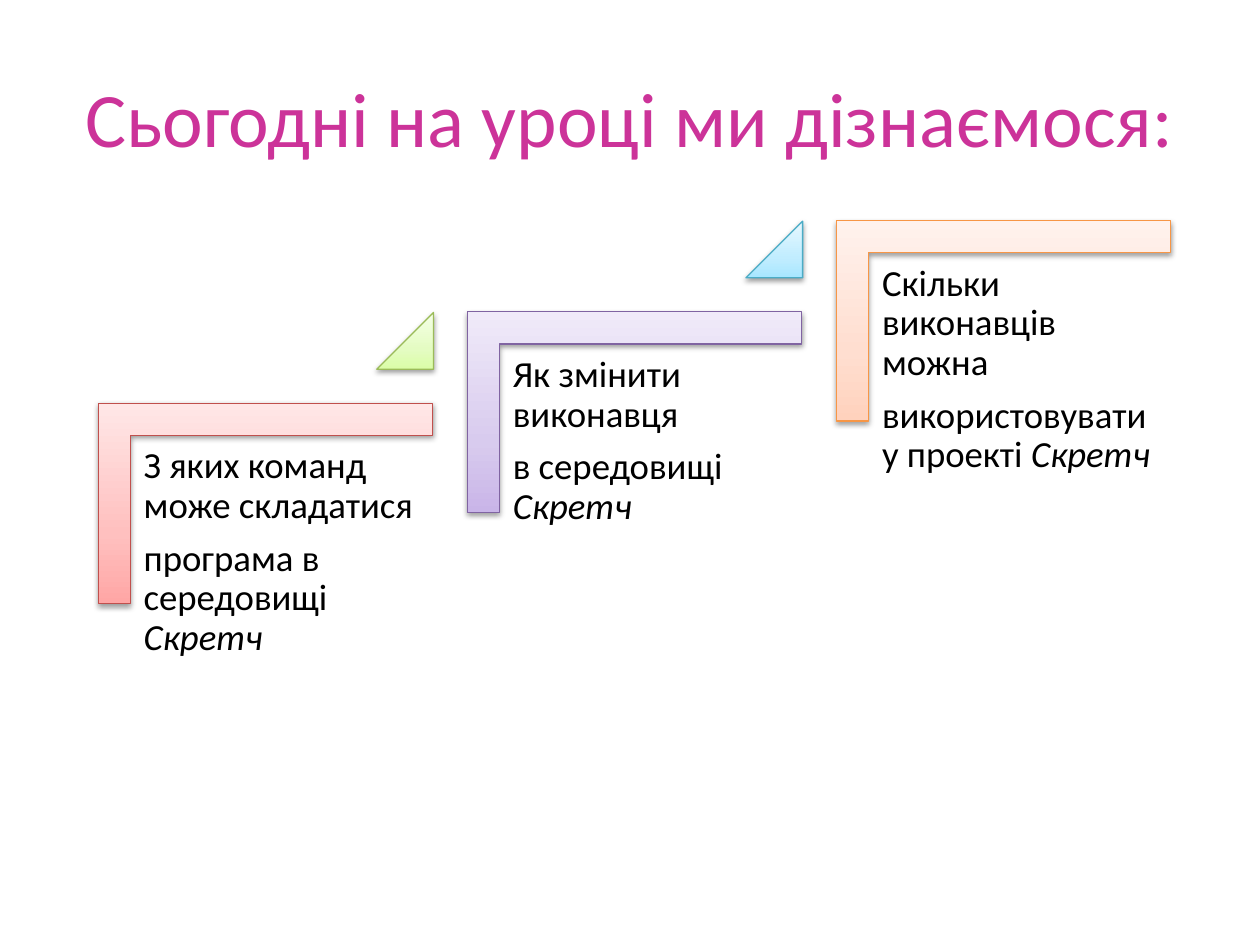
from dataclasses import dataclass

from lxml import etree
from pptx import Presentation
from pptx.dml.color import RGBColor
from pptx.enum.shapes import MSO_SHAPE
from pptx.enum.text import MSO_ANCHOR, PP_ALIGN
from pptx.oxml import parse_xml
from pptx.oxml.ns import nsdecls, qn
from pptx.shapes.autoshape import Shape
from pptx.slide import Slide
from pptx.util import Inches, Pt

CORNER = MSO_SHAPE.CORNER
TRIANGLE = MSO_SHAPE.ISOSCELES_TRIANGLE
CENTER = PP_ALIGN.CENTER
MIDDLE = MSO_ANCHOR.MIDDLE
TOP = MSO_ANCHOR.TOP

FONT = "Calibri"
MAGENTA = RGBColor(0xCC, 0x33, 0x99)
BLACK = RGBColor(0, 0, 0)

STEP_ACROSS = 2.93
STEP_UP = 0.725
STOP_POSITIONS = (0, 35, 100)


@dataclass(frozen=True)
class Palette:
    line: RGBColor
    stops: tuple[RGBColor, RGBColor, RGBColor]


@dataclass(frozen=True)
class Topic:
    opening: str
    ending: str
    palette: Palette


RED = Palette(
    RGBColor(0xC0, 0x50, 0x4D),
    (RGBColor(0xFF, 0xA6, 0xA5), RGBColor(0xFF, 0xC0, 0xBF), RGBColor(0xFF, 0xE7, 0xE7)),
)
GREEN = Palette(
    RGBColor(0x9B, 0xBB, 0x59),
    (RGBColor(0xDA, 0xFD, 0xA7), RGBColor(0xE4, 0xFC, 0xC2), RGBColor(0xF5, 0xFF, 0xE7)),
)
PURPLE = Palette(
    RGBColor(0x80, 0x64, 0xA2),
    (RGBColor(0xC9, 0xB5, 0xE8), RGBColor(0xD8, 0xCB, 0xEE), RGBColor(0xF0, 0xEA, 0xF9)),
)
BLUE = Palette(
    RGBColor(0x4B, 0xAC, 0xC6),
    (RGBColor(0xA7, 0xE6, 0xFF), RGBColor(0xC1, 0xED, 0xFF), RGBColor(0xE7, 0xF8, 0xFF)),
)
ORANGE = Palette(
    RGBColor(0xF7, 0x96, 0x46),
    (RGBColor(0xFF, 0xD2, 0xBD), RGBColor(0xFF, 0xDE, 0xD0), RGBColor(0xFF, 0xF2, 0xED)),
)

TOPICS = (
    Topic("З яких команд може складатися", "програма в середовищі ", RED),
    Topic("Як змінити виконавця", "в середовищі ", PURPLE),
    Topic("Скільки виконавців можна", "використовувати у проекті ", ORANGE),
)
STEP_MARKERS = (GREEN, BLUE)


def add_shadow(shape: Shape) -> None:
    shape.shadow.inherit = False
    effects = shape._element.spPr.find(qn("a:effectLst"))
    shadow = etree.SubElement(
        effects, qn("a:outerShdw"),
        blurRad=str(Pt(3.1)), dist=str(Pt(1.6)), dir="5400000", rotWithShape="0",
    )
    color = etree.SubElement(shadow, qn("a:srgbClr"), val=str(BLACK))
    etree.SubElement(color, qn("a:alpha"), val="38000")


def paint(shape: Shape, palette: Palette) -> None:
    stops = "".join(
        f'<a:gs pos="{position * 1000}"><a:srgbClr val="{color}"/></a:gs>'
        for position, color in zip(STOP_POSITIONS, palette.stops)
    )
    gradient = parse_xml(
        f'<a:gradFill {nsdecls("a")} rotWithShape="0"><a:gsLst>{stops}</a:gsLst>'
        '<a:lin ang="16200000" scaled="0"/></a:gradFill>'
    )
    shape._element.spPr.find(qn("a:prstGeom")).addnext(gradient)
    shape.line.color.rgb = palette.line
    shape.line.width = Pt(0.75)
    add_shadow(shape)


def add_corner(slide: Slide, left: float, top: float, palette: Palette) -> None:
    corner = slide.shapes.add_shape(
        CORNER, Inches(left), Inches(top), Inches(1.59), Inches(2.65)
    )
    corner.rotation = 90
    corner.adjustments[0] = corner.adjustments[1] = 0.16
    paint(corner, palette)


def add_marker(slide: Slide, left: float, top: float, palette: Palette) -> None:
    marker = slide.shapes.add_shape(
        TRIANGLE, Inches(left), Inches(top), Inches(0.45), Inches(0.45)
    )
    marker.adjustments[0] = 1
    paint(marker, palette)


def add_topic_text(slide: Slide, left: float, top: float, topic: Topic) -> None:
    frame = slide.shapes.add_textbox(
        Inches(left), Inches(top), Inches(2.39), Inches(2.1)
    ).text_frame
    frame.word_wrap = True
    frame.vertical_anchor = TOP
    frame.margin_left = frame.margin_right = Inches(0.09)
    frame.margin_top = frame.margin_bottom = Inches(0.09)
    opening = frame.paragraphs[0]
    ending = frame.add_paragraph()
    for paragraph in (opening, ending):
        paragraph.line_spacing = 0.9
        paragraph.space_after = Pt(7.35)
    opening.add_run().text = topic.opening
    ending.add_run().text = topic.ending
    program = ending.add_run()
    program.text = "Скретч"
    program.font.italic = True
    for run in (*opening.runs, *ending.runs):
        run.font.name = FONT
        run.font.size = Pt(21)
        run.font.color.rgb = BLACK


def add_heading(slide: Slide) -> None:
    title = slide.shapes.title
    title.left, title.top = Inches(0.5), Inches(0.3)
    title.width, title.height = Inches(9), Inches(1.25)
    title.text_frame.vertical_anchor = MIDDLE
    paragraph = title.text_frame.paragraphs[0]
    paragraph.alignment = CENTER
    heading = paragraph.add_run()
    heading.text = "Сьогодні на уроці ми дізнаємося:"
    heading.font.name = FONT
    heading.font.size = Pt(44)
    heading.font.color.rgb = MAGENTA


def main() -> None:
    deck = Presentation()
    deck.slide_width, deck.slide_height = Inches(10), Inches(7.5)
    slide = deck.slides.add_slide(deck.slide_layouts[5])
    add_heading(slide)
    for index, topic in enumerate(TOPICS):
        left = 1.31 + index * STEP_ACROSS
        top = 2.67 - index * STEP_UP
        add_corner(slide, left, top, topic.palette)
        add_topic_text(slide, left - 0.26, top + 0.79, topic)
        if index < len(STEP_MARKERS):
            add_marker(slide, left + 1.68, top - 0.19, STEP_MARKERS[index])
    deck.save("out.pptx")


if __name__ == "__main__":
    main()
